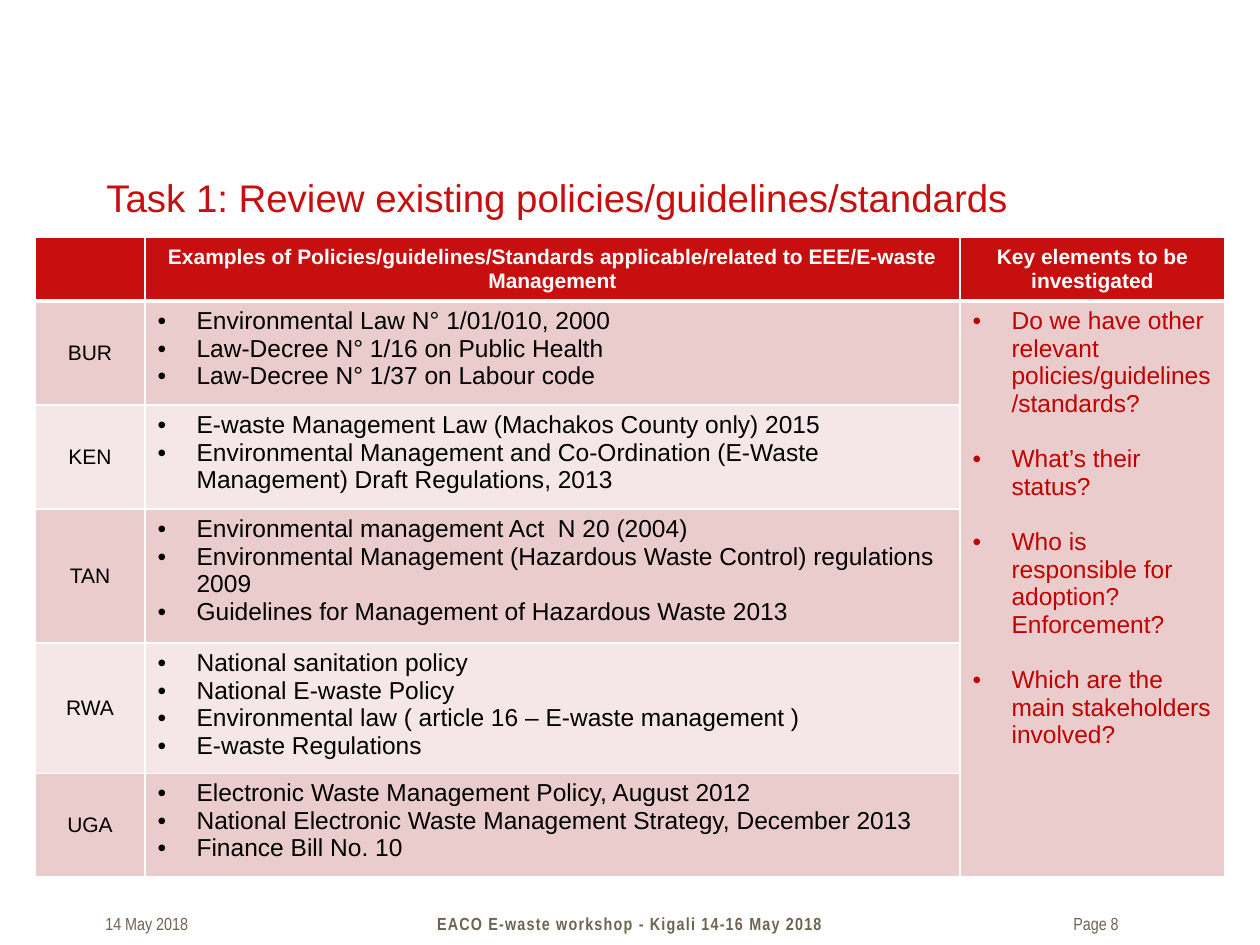
from lxml import etree
from pptx import Presentation, util as u
from pptx.dml.color import RGBColor
from pptx.enum import text
from pptx.oxml.ns import qn

PX = 914400 / 126
RED, DARK_RED, BROWN, WHITE, BLACK = "C80F0F", "C00000", "6E6452", "FFFFFF", "000000"
BANDS = ["EBCCCC", "F5E7E7"]
CENTER, LEFT = text.PP_ALIGN.CENTER, text.PP_ALIGN.LEFT


def px(length):
    return u.Emu(round(length * PX))


def write(frame, lines, size, color, bold=False, font="Arial", align=LEFT,
          bullet=False, gap=0, spacing=0):
    frame.word_wrap = True
    for index, line in enumerate(lines):
        para = frame.add_paragraph() if index else frame.paragraphs[0]
        para.alignment = align
        if bullet:
            props = para._p.get_or_add_pPr()
            props.set("marL", str(px(39)))
            props.set("indent", str(-px(39)))
            etree.SubElement(props, qn("a:buFont")).set("typeface", "Arial")
            etree.SubElement(props, qn("a:buChar")).set("char", "•")
        if index and gap:
            para.space_before = u.Pt(gap)
        span = para.add_run()
        span.text = line
        span.font.size = u.Pt(size)
        span.font.name = font
        span.font.bold = bold
        span.font.color.rgb = RGBColor.from_string(color)
        if spacing:
            span._r.get_or_add_rPr().set("spc", str(spacing))


deck = Presentation()
deck.slide_width, deck.slide_height = px(1260), px(945)
page = deck.slides.add_slide(deck.slide_layouts[6])

# Title
box = page.shapes.add_textbox(px(94), px(164), px(1071), px(86))
box.text_frame.margin_top = px(10)
write(box.text_frame, ["Task 1: Review existing policies/guidelines/standards"], 22, RED)

# Footer: date, event, page number
footers = [
    (93, 179, "14 May 2018", {}),
    (394, 471, "EACO E-waste workshop - Kigali 14-16 May 2018",
     {"bold": True, "align": CENTER, "spacing": 70}),
    (1061, 127, "Page 8", {}),
]
for left, width, words, style in footers:
    box = page.shapes.add_textbox(px(left), px(907), px(width), px(34))
    write(box.text_frame, [words], 10, BROWN, font="Arial Narrow", **style)

# Table content
headers = [
    "",
    "Examples of Policies/guidelines/Standards applicable/related to EEE/E-waste Management",
    "Key elements to be investigated",
]
countries = {
    "BUR": [
        "Environmental Law N° 1/01/010, 2000",
        "Law-Decree N° 1/16 on Public Health",
        "Law-Decree N° 1/37 on Labour code",
    ],
    "KEN": [
        "E-waste Management Law (Machakos County only) 2015",
        "Environmental Management and Co-Ordination (E-Waste Management) Draft Regulations, 2013",
    ],
    "TAN": [
        "Environmental management Act  N 20 (2004)",
        "Environmental Management (Hazardous Waste Control) regulations 2009",
        "Guidelines for Management of Hazardous Waste 2013",
    ],
    "RWA": [
        "National sanitation policy",
        "National E-waste Policy",
        "Environmental law ( article 16 – E-waste management )",
        "E-waste Regulations",
    ],
    "UGA": [
        "Electronic Waste Management Policy, August 2012",
        "National Electronic Waste Management Strategy, December 2013",
        "Finance Bill No. 10",
    ],
}
questions = [
    "Do we have other relevant policies/guidelines/standards?",
    "What’s their status?",
    "Who is responsible for adoption? Enforcement?",
    "Which are the main stakeholders involved?",
]

# Table grid
widths = [110, 815, 265]
heights = [64, 104, 104, 134, 124, 104]
table = page.shapes.add_table(len(heights), len(widths), px(35), px(237),
                              px(sum(widths)), px(sum(heights))).table
for column, width in zip(table.columns, widths):
    column.width = px(width)
for row, height in zip(table.rows, heights):
    row.height = px(height)

# Cell borders and fills
for r in range(len(heights)):
    for c in range(len(widths)):
        cell = table.cell(r, c)
        props = cell._tc.get_or_add_tcPr()
        for side in "LRTB":
            thick = (r == 0 and side == "B") or (r == 1 and side == "T")
            line = etree.SubElement(props, qn(f"a:ln{side}"))
            line.set("w", str(u.Pt(3 if thick else 1)))
            fill = etree.SubElement(line, qn("a:solidFill"))
            etree.SubElement(fill, qn("a:srgbClr")).set("val", WHITE)
        cell.fill.solid()
        shade = RED if r == 0 else BANDS[0] if c == 2 else BANDS[(r - 1) % 2]
        cell.fill.fore_color.rgb = RGBColor.from_string(shade)

# Header row
for c, header in enumerate(headers):
    cell = table.cell(0, c)
    cell.vertical_anchor = text.MSO_ANCHOR.MIDDLE
    if header:
        write(cell.text_frame, [header], 12, WHITE, bold=True, align=CENTER)

# Country rows
for r, (country, policies) in enumerate(countries.items(), 1):
    label = table.cell(r, 0)
    label.vertical_anchor = text.MSO_ANCHOR.MIDDLE
    write(label.text_frame, [country], 12, BLACK, align=CENTER)
    write(table.cell(r, 1).text_frame, policies, 14, BLACK, bullet=True)

# Questions beside all countries
table.cell(1, 2).merge(table.cell(len(countries), 2))
write(table.cell(1, 2).text_frame, questions, 14, DARK_RED, bullet=True, gap=16)

deck.save("out.pptx")
